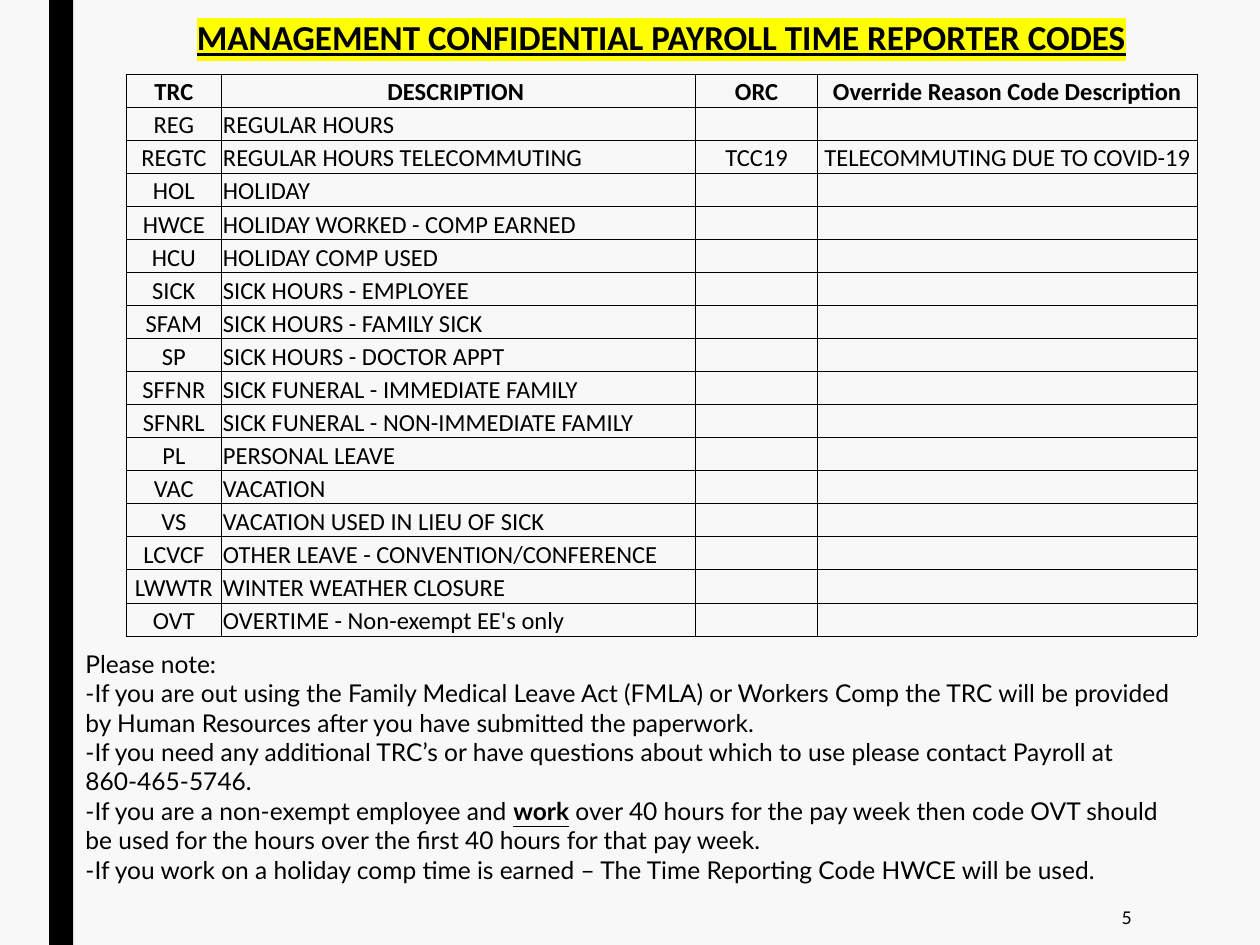
from lxml import etree
from pptx import Presentation
from pptx.dml.color import RGBColor
from pptx.enum.shapes import MSO_SHAPE
from pptx.enum.text import MSO_ANCHOR, PP_ALIGN
from pptx.oxml.ns import qn
from pptx.util import Inches, Pt

LEFT, CENTER, RIGHT = PP_ALIGN.LEFT, PP_ALIGN.CENTER, PP_ALIGN.RIGHT
TOP, MIDDLE, BOTTOM = MSO_ANCHOR.TOP, MSO_ANCHOR.MIDDLE, MSO_ANCHOR.BOTTOM
RECTANGLE = MSO_SHAPE.RECTANGLE

TITLE = "MANAGEMENT CONFIDENTIAL PAYROLL TIME REPORTER CODES"
HEADERS = ("TRC", "DESCRIPTION ", "ORC", "Override Reason Code Description")
CODES = [
    ("REG", "REGULAR HOURS"),
    ("REGTC", "REGULAR HOURS TELECOMMUTING", "TCC19", " TELECOMMUTING DUE TO COVID-19"),
    ("HOL", "HOLIDAY"),
    ("HWCE", "HOLIDAY WORKED - COMP EARNED"),
    ("HCU", "HOLIDAY COMP USED"),
    ("SICK", "SICK HOURS - EMPLOYEE"),
    ("SFAM", "SICK HOURS - FAMILY SICK"),
    ("SP", "SICK HOURS - DOCTOR APPT"),
    ("SFFNR", "SICK FUNERAL - IMMEDIATE FAMILY"),
    ("SFNRL", "SICK FUNERAL - NON-IMMEDIATE FAMILY"),
    ("PL", "PERSONAL LEAVE"),
    ("VAC", "VACATION"),
    ("VS", "VACATION USED IN LIEU OF SICK"),
    ("LCVCF", "OTHER LEAVE - CONVENTION/CONFERENCE"),
    ("LWWTR", "WINTER WEATHER CLOSURE"),
    ("OVT", "OVERTIME - Non-exempt EE's only"),
]
NOTES = [
    ["Please note:"],
    ["-If you are out using the Family Medical Leave Act (FMLA) or Workers Comp the TRC "
     "will be provided by Human Resources after you have submitted the paperwork."],
    ["-If you need any additional TRC’s or have questions about which to use please "
     "contact Payroll at"],
    ["860-465-5746."],
    ["-If you are a non-exempt employee and ", ("work", True),
     " over 40 hours for the pay week then code OVT should be used for the hours over "
     "the first 40 hours for that pay week."],
    ["-If you work on a holiday comp time is earned – The Time Reporting Code HWCE will be used."],
]
PAGE_NUMBER = "5"

THEME = {
    "background": "F8F8F8", "ink": "000000", "highlight": "FFFF00",
    "table_font": "Calibri", "note_font": "Lato",
    "title": 20, "body": 14, "number": 10, "spacer": 1, "border": 0.5,
}
WIDTH, HEIGHT = 10, 7.5
BAR = (0.39, 0, 0.19, HEIGHT)
NOTE_BOX = (0.58, 5.1, 8.92, 2.42)
NUMBER_BOX = (7.77, 7.06, 1.31, 0.44)
TABLE_LEFT, TABLE_TOP = 1, 0.07
COLUMNS = (0.76, 3.76, 0.97, 3.01)
COLUMN_ALIGNMENTS = (CENTER, LEFT, CENTER, LEFT)
TITLE_HEIGHT, SPACER_HEIGHT, CODES_BOTTOM = 0.41, 0.11, 5.05
NO_STYLE = "{2D5ABB26-0587-4C30-8999-92F81FD0307C}"


def color(name):
    return RGBColor.from_string(THEME[name])


def add_run(paragraph, text, size, font, bold=False, underline=False):
    run = paragraph.add_run()
    run.text = text
    run.font.size = Pt(size)
    run.font.name = font
    run.font.bold = bold
    run.font.underline = underline
    run.font.color.rgb = color("ink")
    return run


def highlight(run):
    mark = etree.Element(qn("a:highlight"))
    etree.SubElement(mark, qn("a:srgbClr"), val=THEME["highlight"])
    run.font._element.find(qn("a:solidFill")).addnext(mark)


def add_border(cell, sides):
    properties = cell._tc.get_or_add_tcPr()
    for index, side in enumerate(sides):
        line = etree.Element(qn("a:ln" + side), w=str(Pt(THEME["border"])))
        fill = etree.SubElement(line, qn("a:solidFill"))
        etree.SubElement(fill, qn("a:srgbClr"), val=THEME["ink"])
        properties.insert(index, line)


def fill_cell(cell, text, size, alignment=LEFT, bold=False, underline=False):
    cell.margin_left = cell.margin_right = cell.margin_top = Inches(0.01)
    cell.margin_bottom = 0
    cell.vertical_anchor = BOTTOM
    cell.fill.background()
    paragraph = cell.text_frame.paragraphs[0]
    paragraph.alignment = alignment
    if text:
        return add_run(paragraph, text, size, THEME["table_font"], bold, underline)
    etree.SubElement(paragraph._p, qn("a:endParaRPr"), sz=str(size * 100))


def add_code_table(slide):
    row_height = (CODES_BOTTOM - TABLE_TOP - TITLE_HEIGHT - SPACER_HEIGHT) / (len(CODES) + 1)
    heights = [TITLE_HEIGHT, SPACER_HEIGHT] + [row_height] * (len(CODES) + 1)
    table = slide.shapes.add_table(
        len(heights), len(COLUMNS), Inches(TABLE_LEFT), Inches(TABLE_TOP),
        Inches(sum(COLUMNS)), Inches(sum(heights))).table
    table.first_row = table.horz_banding = False
    table._tbl.tblPr.find(qn("a:tableStyleId")).text = NO_STYLE
    for column, width in zip(table.columns, COLUMNS):
        column.width = Inches(width)
    for row, height in zip(table.rows, heights):
        row.height = Inches(height)

    table.cell(0, 0).merge(table.cell(0, len(COLUMNS) - 1))
    highlight(fill_cell(table.cell(0, 0), TITLE, THEME["title"], CENTER, True, True))
    for cell in table.rows[1].cells:
        fill_cell(cell, "", THEME["spacer"])
        add_border(cell, "B")
    for row_index, values in enumerate([HEADERS] + CODES, start=2):
        is_header = values is HEADERS
        padded = values + ("",) * (len(COLUMNS) - len(values))
        for column_index, text in enumerate(padded):
            cell = table.cell(row_index, column_index)
            alignment = CENTER if is_header else COLUMN_ALIGNMENTS[column_index]
            fill_cell(cell, text, THEME["body"], alignment, is_header)
            add_border(cell, "LRTB")


def add_text(slide, box, paragraphs, size, alignment=LEFT, anchor=TOP):
    frame = slide.shapes.add_textbox(*map(Inches, box)).text_frame
    frame.word_wrap = True
    frame.vertical_anchor = anchor
    for index, pieces in enumerate(paragraphs):
        paragraph = frame.add_paragraph() if index else frame.paragraphs[0]
        paragraph.alignment = alignment
        for piece in pieces:
            text, strong = (piece, False) if isinstance(piece, str) else piece
            add_run(paragraph, text, size, THEME["note_font"], strong, strong)


def main():
    presentation = Presentation()
    presentation.slide_width, presentation.slide_height = Inches(WIDTH), Inches(HEIGHT)
    slide = presentation.slides.add_slide(presentation.slide_layouts[6])
    slide.background.fill.solid()
    slide.background.fill.fore_color.rgb = color("background")

    bar = slide.shapes.add_shape(RECTANGLE, *map(Inches, BAR))
    bar.shadow.inherit = False
    bar.fill.solid()
    bar.fill.fore_color.rgb = color("ink")
    bar.line.fill.background()

    add_text(slide, NUMBER_BOX, [[PAGE_NUMBER]], THEME["number"], RIGHT, MIDDLE)
    add_text(slide, NOTE_BOX, NOTES, THEME["body"])
    add_code_table(slide)
    presentation.save("out.pptx")


if __name__ == "__main__":
    main()
